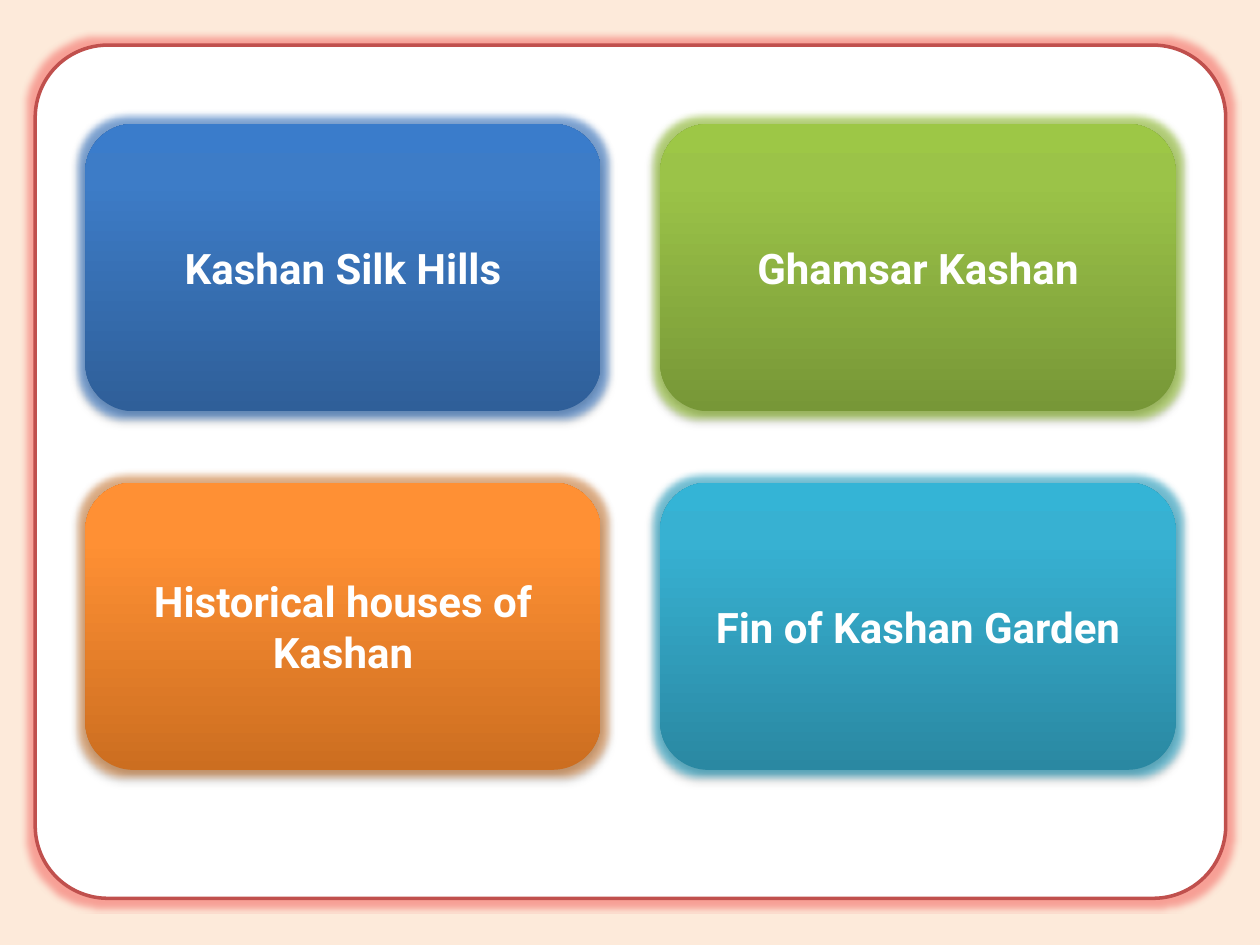
from dataclasses import dataclass

from lxml import etree
from pptx import Presentation
from pptx.dml.color import RGBColor
from pptx.enum.shapes import MSO_SHAPE
from pptx.enum.text import MSO_ANCHOR, PP_ALIGN
from pptx.oxml.ns import qn
from pptx.util import Cm, Pt

ROUNDED = MSO_SHAPE.ROUNDED_RECTANGLE
MIDDLE = MSO_ANCHOR.MIDDLE
CENTER = PP_ALIGN.CENTER
BLANK_LAYOUT = 6


@dataclass(frozen=True)
class Theme:
    background: str = "FDEADA"
    panel: str = "FFFFFF"
    border: str = "C0504D"
    border_glow: str = "F15450"
    text: str = "FFFFFF"
    shadow: str = "000000"
    font: str = "Roboto"
    label_size: int = 24
    border_width: int = 2
    glow_radius: int = 8


THEME = Theme()
STOPS = (0, 80, 100)

# Label, gradient from bottom to top, glow colour; filled row by row
CARDS = [
    ("Kashan Silk Hills", ("2F5F99", "3D7CC7", "3A7CCB"), "1F69C5"),
    ("Ghamsar Kashan", ("779737", "9BC348", "9DC746"), "8BC117"),
    ("Historical houses of Kashan", ("CC6E20", "FF9034", "FF9136"), "DB7D2D"),
    ("Fin of Kashan Garden", ("2A88A2", "37B1D2", "34B4D6"), "0DA1C9"),
]
COLUMNS = 2
CARD_LEFT, CARD_TOP = 1.72, 2.5
CARD_WIDTH, CARD_HEIGHT = 10.39, 5.79
COLUMN_STEP, ROW_STEP = 11.59, 7.23


def rgb(color):
    return RGBColor.from_string(color)


def add_color(parent, color, alpha=None):
    clr = etree.SubElement(parent, qn("a:srgbClr"), val=color)
    if alpha is not None:
        etree.SubElement(clr, qn("a:alpha"), val=str(alpha * 1000))


def add_rounded(slide, left, top, width, height):
    sp = slide.shapes.add_shape(ROUNDED, Cm(left), Cm(top), Cm(width), Cm(height))
    sp.shadow.inherit = False
    return sp


def add_glow(sp, color):
    effects = sp.element.spPr.find(qn("a:effectLst"))
    glow = etree.SubElement(effects, qn("a:glow"), rad=str(Pt(THEME.glow_radius)))
    add_color(glow, color, 50)


def add_drop_shadow(sp):
    effects = sp.element.spPr.find(qn("a:effectLst"))
    shadow = etree.SubElement(
        effects, qn("a:outerShdw"), blurRad=str(Pt(3.1)), dist=str(Pt(1.8)),
        dir="5400000", rotWithShape="0")
    add_color(shadow, THEME.shadow, 35)


def fill_gradient(sp, colors):
    sp.fill.gradient()
    sp.fill.gradient_angle = 90
    stops = sp.element.spPr.find(qn("a:gradFill")).find(qn("a:gsLst"))
    stops.clear()
    for position, color in zip(STOPS, colors):
        stop = etree.SubElement(stops, qn("a:gs"), pos=str(position * 1000))
        add_color(stop, color)


def set_label(sp, text):
    tf = sp.text_frame
    tf.word_wrap = True
    tf.vertical_anchor = MIDDLE
    p = tf.paragraphs[0]
    p.text = text
    p.alignment = CENTER
    p._p.get_or_add_pPr().set("rtl", "1")
    font = p.runs[0].font
    font.name = THEME.font
    font.size = Pt(THEME.label_size)
    font.bold = True
    font.color.rgb = rgb(THEME.text)


def add_panel(slide):
    sp = add_rounded(slide, 0.71, 0.91, 24, 17.2)
    sp.adjustments[0] = 0.085
    sp.fill.solid()
    sp.fill.fore_color.rgb = rgb(THEME.panel)
    sp.line.color.rgb = rgb(THEME.border)
    sp.line.width = Pt(THEME.border_width)
    add_glow(sp, THEME.border_glow)


def add_card(slide, index, label, colors, glow):
    row, column = divmod(index, COLUMNS)
    sp = add_rounded(slide, CARD_LEFT + column * COLUMN_STEP,
                     CARD_TOP + row * ROW_STEP, CARD_WIDTH, CARD_HEIGHT)
    fill_gradient(sp, colors)
    sp.line.fill.background()
    add_glow(sp, glow)
    add_drop_shadow(sp)
    set_label(sp, label)


def main():
    prs = Presentation()
    prs.slide_width, prs.slide_height = Cm(25.4), Cm(19.05)
    slide = prs.slides.add_slide(prs.slide_layouts[BLANK_LAYOUT])
    slide.background.fill.solid()
    slide.background.fill.fore_color.rgb = rgb(THEME.background)
    add_panel(slide)
    for index, card in enumerate(CARDS):
        add_card(slide, index, *card)
    prs.save("out.pptx")


if __name__ == "__main__":
    main()
